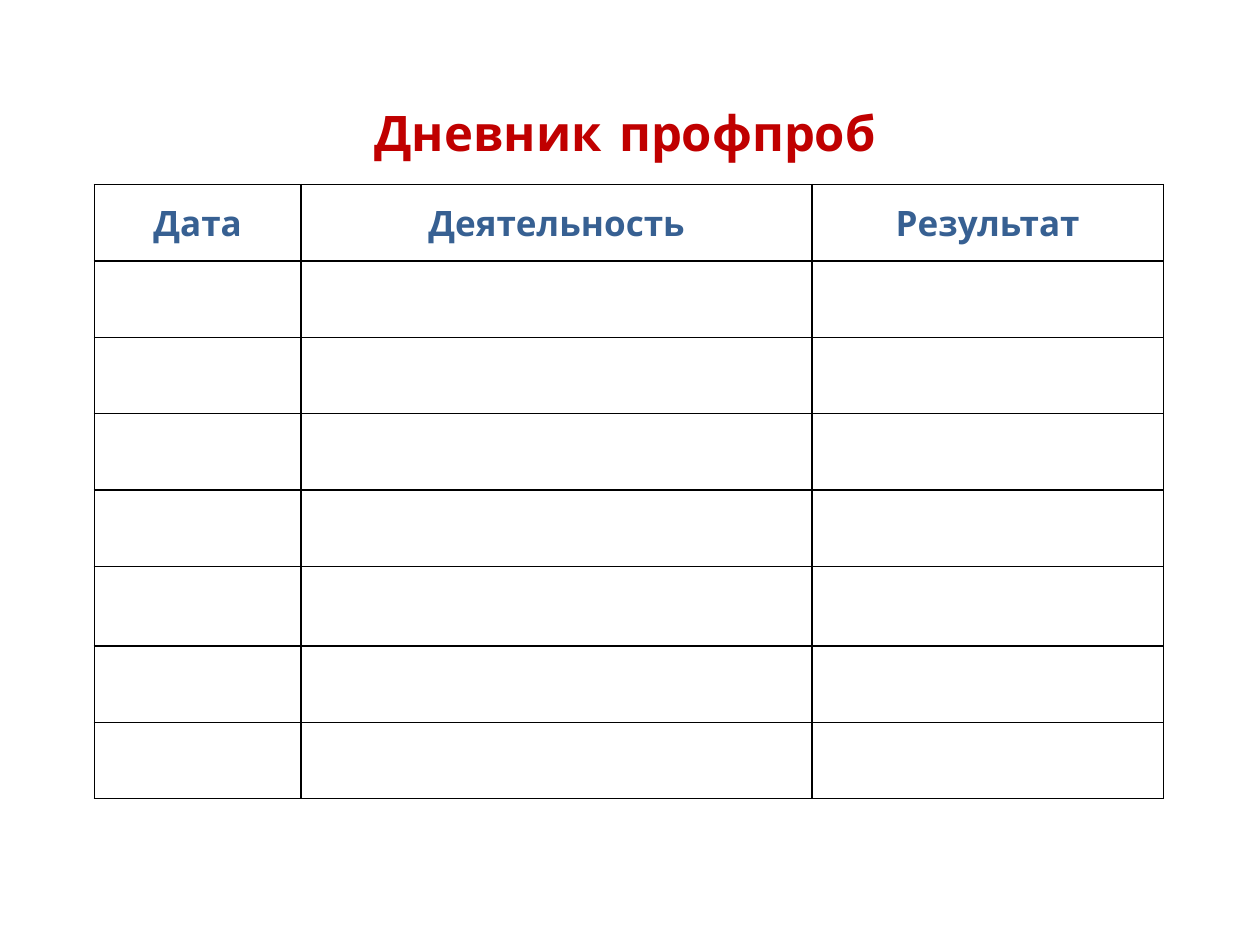
"""Build a slide with a blank diary table for vocational trials."""
from lxml import etree
from pptx import Presentation
from pptx.dml.color import RGBColor
from pptx.enum.text import MSO_ANCHOR, PP_ALIGN
from pptx.oxml.ns import qn
from pptx.util import Cm, Pt

CENTER = PP_ALIGN.CENTER
TOP = MSO_ANCHOR.TOP
RED = RGBColor(0xC0, 0x00, 0x00)
BLUE = RGBColor(0x37, 0x60, 0x92)
BLACK = RGBColor(0x00, 0x00, 0x00)

HEADINGS = ["Дата", "Деятельность", "Результат"]
COLUMN_WIDTHS = [4.17, 10.3, 7.08]
ROW_HEIGHTS = [1.54] * 5 + [1.6] + [1.54] * 2


class DiarySlide:
    """Hold the diary style and the slide being filled."""

    font_name = "Comic Neue"
    border_width = Pt(1)

    def __init__(self, presentation):
        self.slide = presentation.slides.add_slide(presentation.slide_layouts[5])

    def format_paragraph(self, paragraph, size, color):
        """Centre a paragraph and set its bold font."""
        paragraph.alignment = CENTER
        font = paragraph.font
        font.name, font.size, font.bold = self.font_name, Pt(size), True
        font.color.rgb = color

    def add_title(self, text, left, top, width, height):
        """Place and format the title."""
        title = self.slide.shapes.title
        title.left, title.top = Cm(left), Cm(top)
        title.width, title.height = Cm(width), Cm(height)
        frame = title.text_frame
        frame.text = text
        frame.word_wrap = True
        frame.vertical_anchor = TOP
        self.format_paragraph(frame.paragraphs[0], 28, RED)

    def add_borders(self, cell):
        """Draw all four borders of a cell."""
        properties = cell._tc.get_or_add_tcPr()
        for position, side in enumerate(("a:lnL", "a:lnR", "a:lnT", "a:lnB")):
            line = etree.Element(qn(side), w=str(self.border_width))
            fill = etree.SubElement(line, qn("a:solidFill"))
            etree.SubElement(fill, qn("a:srgbClr"), val=str(BLACK))
            properties.insert(position, line)

    def add_table(self, headings, widths, heights, left, top):
        """Add a bordered table with a heading row and blank rows."""
        table = self.slide.shapes.add_table(
            len(heights), len(widths), Cm(left), Cm(top),
            Cm(sum(widths)), Cm(sum(heights)),
        ).table
        table.horz_banding = False
        for column, width in zip(table.columns, widths):
            column.width = Cm(width)
        for row, height in zip(table.rows, heights):
            row.height = Cm(height)
        for cell in table.iter_cells():
            cell.fill.background()
            self.add_borders(cell)
        for cell, heading in zip(table.rows[0].cells, headings):
            cell.text = heading
            cell.margin_left = cell.margin_right = Cm(0.18)
            cell.margin_top = cell.margin_bottom = Cm(0)
            paragraph = cell.text_frame.paragraphs[0]
            paragraph.line_spacing = 1.5
            self.format_paragraph(paragraph, 20, BLUE)


def main():
    """Create and save the presentation."""
    presentation = Presentation()
    presentation.slide_width, presentation.slide_height = Cm(25.4), Cm(19.05)
    diary = DiarySlide(presentation)
    diary.add_table(HEADINGS, COLUMN_WIDTHS, ROW_HEIGHTS, left=1.9, top=3.72)
    diary.add_title("Дневник профпроб", left=5.7, top=1.93, width=13.8, height=1.45)
    presentation.save("out.pptx")


if __name__ == "__main__":
    main()
